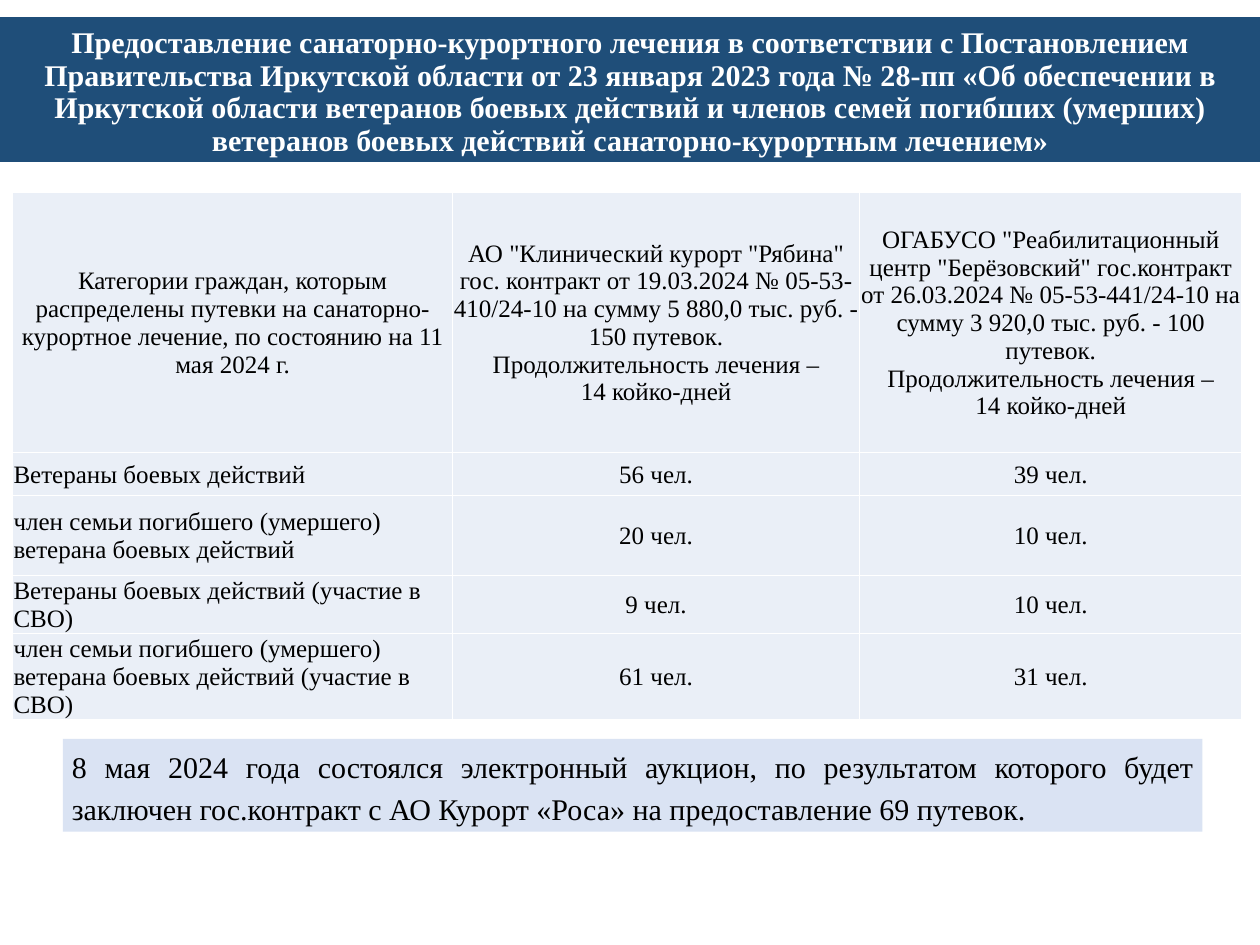
"""Build a slide on sanatorium vouchers for combat veterans."""
from lxml import etree
from pptx import Presentation
from pptx import util as u
from pptx.dml.color import RGBColor
from pptx.enum import shapes, text
from pptx.oxml import ns

NAVY = RGBColor(0x1F, 0x4E, 0x79)
PALE_BLUE = RGBColor(0xDA, 0xE3, 0xF3)
CELL_BLUE = RGBColor(0xEA, 0xEF, 0xF7)
WHITE = RGBColor(0xFF, 0xFF, 0xFF)
BLACK = RGBColor(0, 0, 0)
FONT = "Times New Roman"

TITLE = (
    "Предоставление санаторно-курортного лечения в соответствии с Постановлением "
    "Правительства Иркутской области от 23 января 2023 года № 28-пп «Об обеспечении в "
    "Иркутской области ветеранов боевых действий и членов семей погибших (умерших) "
    "ветеранов боевых действий санаторно-курортным лечением»"
)
DURATION = "Продолжительность лечения –\v14 койко-дней"
ROWS = [
    (
        "Категории граждан, которым распределены путевки на санаторно-курортное "
        "лечение, по состоянию на 11 мая 2024 г.",
        'АО "Клинический курорт "Рябина" гос. контракт от 19.03.2024 № '
        "05-53-410/24-10 на сумму 5 880,0 тыс. руб. - 150 путевок.\n" + DURATION,
        'ОГАБУСО "Реабилитационный центр "Берёзовский" гос.контракт от 26.03.2024 № '
        "05-53-441/24-10 на сумму 3 920,0 тыс. руб. - 100 путевок.\n" + DURATION,
    ),
    ("Ветераны боевых действий", "56 чел.", "39 чел."),
    ("член семьи погибшего (умершего) ветерана боевых действий", "20 чел.", "10 чел."),
    ("Ветераны боевых действий (участие в СВО)", "9 чел.", "10 чел."),
    (
        "член семьи погибшего (умершего) ветерана боевых действий (участие в СВО)",
        "61 чел.",
        "31 чел.",
    ),
]
COLUMN_WIDTHS = [4.89, 4.52, 4.25]
ROW_HEIGHTS = [2.89, 0.48, 0.88, 0.65, 0.96]
AUCTION_NOTE = (
    "8 мая 2024 года состоялся электронный аукцион, по результатом которого будет "
    "заключен гос.контракт с АО Курорт «Роса» на предоставление 69 путевок."
)


def place(shape, left, top, width, height):
    shape.left, shape.top = u.Inches(left), u.Inches(top)
    shape.width, shape.height = u.Inches(width), u.Inches(height)


def paint(item, color):
    item.fill.solid()
    item.fill.fore_color.rgb = color


def write(frame, content, size, color, alignment, spacing=None, bold=False):
    frame.word_wrap = True
    frame.text = content
    for paragraph in frame.paragraphs:
        paragraph.alignment = alignment
        paragraph.line_spacing = spacing
        font = paragraph.font
        font.name, font.size, font.bold = FONT, u.Pt(size), bold
        font.color.rgb = color


def add_borders(cell):
    properties = cell._tc.get_or_add_tcPr()
    for side in ("a:lnL", "a:lnR", "a:lnT", "a:lnB"):
        line = etree.SubElement(properties, ns.qn(side), w=str(u.Pt(1)))
        fill = etree.SubElement(line, ns.qn("a:solidFill"))
        etree.SubElement(fill, ns.qn("a:srgbClr"), val=str(WHITE))


def add_title(slide):
    title = slide.shapes.title
    place(title, 0, 0.19, 14, 1.61)
    paint(title, NAVY)
    write(title.text_frame, TITLE, 24, WHITE, text.PP_ALIGN.CENTER, 0.9, True)
    title.text_frame.vertical_anchor = text.MSO_ANCHOR.BOTTOM
    title.text_frame.auto_size = text.MSO_AUTO_SIZE.NONE


def add_voucher_table(slide):
    table = slide.shapes.add_table(
        len(ROWS), len(COLUMN_WIDTHS), u.Inches(0.14), u.Inches(2.14),
        u.Inches(sum(COLUMN_WIDTHS)), u.Inches(sum(ROW_HEIGHTS)),
    ).table
    table.first_row = table.horz_banding = False
    for column, width in zip(table.columns, COLUMN_WIDTHS):
        column.width = u.Inches(width)
    for row, height in zip(table.rows, ROW_HEIGHTS):
        row.height = u.Inches(height)
    for row_index, row in enumerate(ROWS):
        for column_index, content in enumerate(row):
            cell = table.cell(row_index, column_index)
            is_category = row_index > 0 and column_index == 0
            alignment = text.PP_ALIGN.LEFT if is_category else text.PP_ALIGN.CENTER
            write(cell.text_frame, content, 20, BLACK, alignment)
            cell.vertical_anchor = text.MSO_ANCHOR.MIDDLE
            cell.margin_left = cell.margin_right = cell.margin_top = u.Inches(0.01)
            cell.margin_bottom = 0
            add_borders(cell)
            paint(cell, CELL_BLUE)


def add_auction_note(slide):
    note = slide.shapes.add_shape(shapes.MSO_SHAPE.RECTANGLE, 0, 0, 0, 0)
    place(note, 0.7, 8.21, 12.66, 1.03)
    note.shadow.inherit = False
    paint(note, PALE_BLUE)
    note.line.fill.background()
    write(note.text_frame, AUCTION_NOTE, 24, BLACK, text.PP_ALIGN.JUSTIFY, 1.15)
    note.text_frame.vertical_anchor = text.MSO_ANCHOR.TOP
    note.text_frame.auto_size = text.MSO_AUTO_SIZE.SHAPE_TO_FIT_TEXT


def main():
    presentation = Presentation()
    presentation.slide_width = u.Inches(14)
    presentation.slide_height = u.Inches(10.5)
    slide = presentation.slides.add_slide(presentation.slide_layouts[5])
    add_title(slide)
    add_voucher_table(slide)
    add_auction_note(slide)
    presentation.save("out.pptx")


if __name__ == "__main__":
    main()
